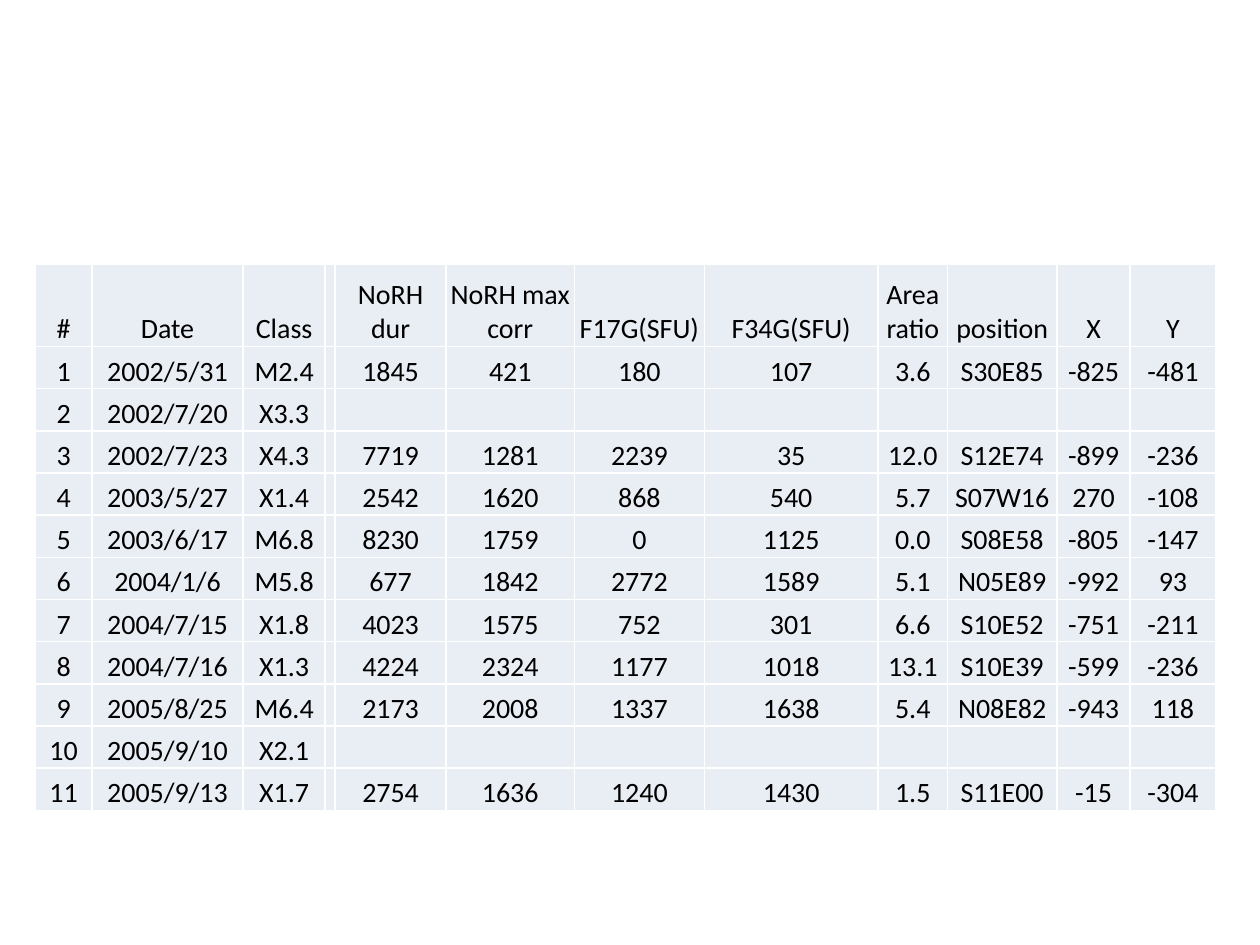
from typing import NamedTuple

from lxml.etree import SubElement
from pptx import Presentation
from pptx.dml.color import RGBColor
from pptx.enum.text import MSO_ANCHOR, PP_ALIGN
from pptx.oxml.ns import qn
from pptx.util import Pt

BLACK = RGBColor(0x00, 0x00, 0x00)
WHITE = RGBColor(0xFF, 0xFF, 0xFF)
PALE_BLUE = RGBColor(0xE9, 0xED, 0xF4)

LEFT, TOP = 20.16, 151.2
HEADER_HEIGHT, ROW_HEIGHT = 46.8, 24.1
BORDER_WIDTH = 1

CELL_FORMAT = {
    "vertical_anchor": MSO_ANCHOR.BOTTOM,
    "margin_left": Pt(0.72),
    "margin_right": Pt(0.72),
    "margin_top": Pt(0.72),
    "margin_bottom": Pt(0),
}
FONT_FORMAT = {"name": "Calibri", "size": Pt(16), "bold": False}


class Column(NamedTuple):
    title: str
    width: float


class Flare(NamedTuple):
    number: str
    date: str
    flare_class: str
    spacer: str = ""
    duration: str = ""
    max_corr: str = ""
    flux_17g: str = ""
    flux_34g: str = ""
    area_ratio: str = ""
    position: str = ""
    x: str = ""
    y: str = ""


COLUMNS = [
    Column("#", 32.4),
    Column("Date", 86.4),
    Column("Class", 46.8),
    Column("", 5.76),
    Column("NoRH dur", 63.36),
    Column("NoRH max corr", 73.44),
    Column("F17G(SFU)", 74.16),
    Column("F34G(SFU)", 99.36),
    Column("Area ratio", 39.6),
    Column("position", 62.64),
    Column("X", 41.76),
    Column("Y", 48.96),
]

FLARES = [
    Flare("1", "2002/5/31", "M2.4", "", "1845", "421", "180", "107", "3.6", "S30E85", "-825", "-481"),
    Flare("2", "2002/7/20", "X3.3"),
    Flare("3", "2002/7/23", "X4.3", "", "7719", "1281", "2239", "35", "12.0", "S12E74", "-899", "-236"),
    Flare("4", "2003/5/27", "X1.4", "", "2542", "1620", "868", "540", "5.7", "S07W16", "270", "-108"),
    Flare("5", "2003/6/17", "M6.8", "", "8230", "1759", "0", "1125", "0.0", "S08E58", "-805", "-147"),
    Flare("6", "2004/1/6", "M5.8", "", "677", "1842", "2772", "1589", "5.1", "N05E89", "-992", "93"),
    Flare("7", "2004/7/15", "X1.8", "", "4023", "1575", "752", "301", "6.6", "S10E52", "-751", "-211"),
    Flare("8", "2004/7/16", "X1.3", "", "4224", "2324", "1177", "1018", "13.1", "S10E39", "-599", "-236"),
    Flare("9", "2005/8/25", "M6.4", "", "2173", "2008", "1337", "1638", "5.4", "N08E82", "-943", "118"),
    Flare("10", "2005/9/10", "X2.1"),
    Flare("11", "2005/9/13", "X1.7", "", "2754", "1636", "1240", "1430", "1.5", "S11E00", "-15", "-304"),
]


def apply_format(target, values: dict) -> None:
    for name, value in values.items():
        setattr(target, name, value)


def add_borders(cell) -> None:
    tc_pr = cell._tc.get_or_add_tcPr()
    for side in ("lnL", "lnR", "lnT", "lnB"):
        ln = SubElement(tc_pr, qn(f"a:{side}"), w=str(Pt(BORDER_WIDTH)))
        fill = SubElement(ln, qn("a:solidFill"))
        SubElement(fill, qn("a:srgbClr"), val=str(WHITE))


def fill_cell(cell, text: str) -> None:
    apply_format(cell, CELL_FORMAT)
    # Borders come before the fill in the cell properties
    add_borders(cell)
    cell.fill.solid()
    cell.fill.fore_color.rgb = PALE_BLUE
    if text:
        p = cell.text_frame.paragraphs[0]
        p.alignment = PP_ALIGN.CENTER
        r = p.add_run()
        r.text = text
        apply_format(r.font, FONT_FORMAT)
        r.font.color.rgb = BLACK


def add_flare_table(s, columns: list[Column], flares: list[Flare]) -> None:
    rows = [[c.title for c in columns], *flares]
    heights = [HEADER_HEIGHT] + [ROW_HEIGHT] * len(flares)
    width = sum(c.width for c in columns)
    table = s.shapes.add_table(
        len(rows), len(columns), Pt(LEFT), Pt(TOP), Pt(width), Pt(sum(heights))
    ).table
    apply_format(table, {"first_row": False, "horz_banding": False})

    # Grid sizes
    for table_column, column in zip(table.columns, columns):
        table_column.width = Pt(column.width)
    for table_row, height in zip(table.rows, heights):
        table_row.height = Pt(height)

    # Header and data cells
    for table_row, texts in zip(table.rows, rows):
        for cell, text in zip(table_row.cells, texts):
            fill_cell(cell, text)


def main() -> None:
    prs = Presentation()
    prs.slide_width, prs.slide_height = Pt(720), Pt(540)
    s = prs.slides.add_slide(prs.slide_layouts[6])
    add_flare_table(s, COLUMNS, FLARES)
    prs.save("out.pptx")


if __name__ == "__main__":
    main()
